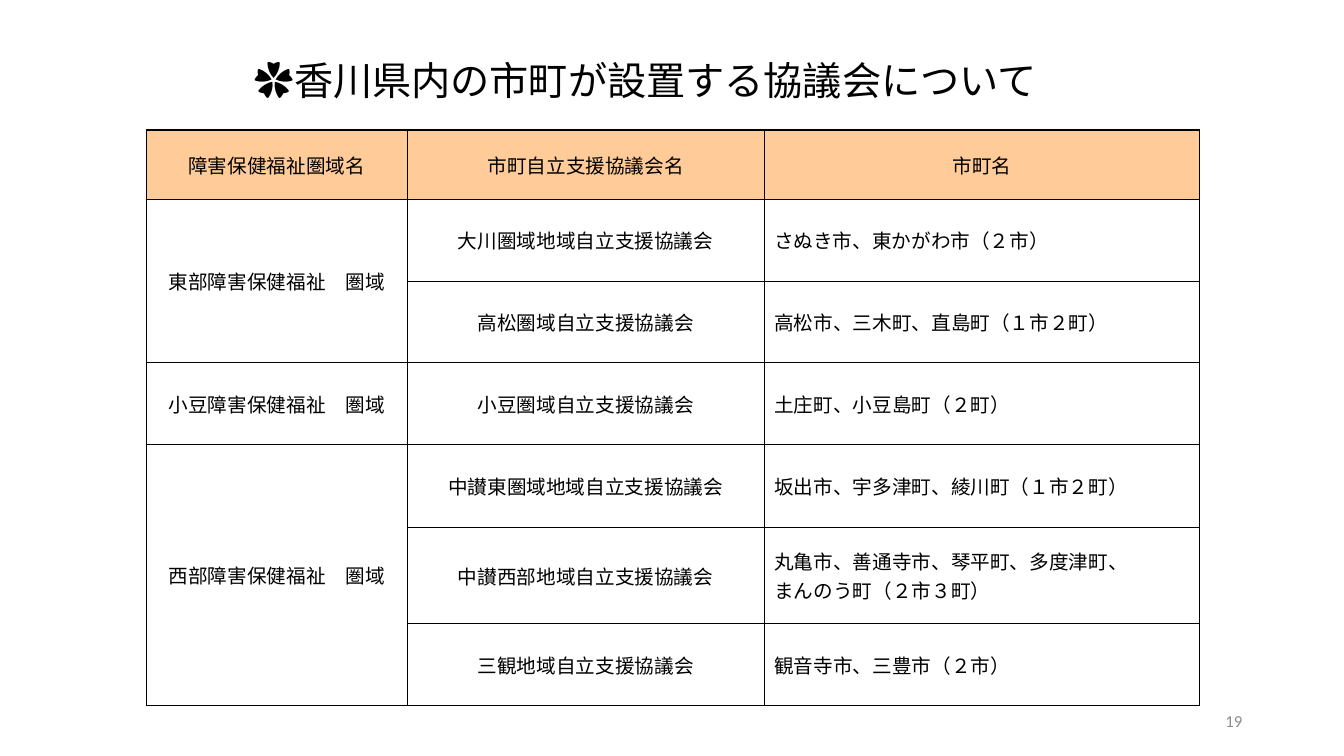
from lxml import etree
from pptx import Presentation
from pptx import util as u
from pptx.dml import color
from pptx.enum import text
from pptx.oxml import ns

GOTHIC = "Noto Sans CJK JP"
COLUMN_WIDTHS = [2.59, 3.54, 4.32]
ROW_HEIGHTS = [0.69, 0.81, 0.81, 0.81, 0.82, 0.96, 0.81]
HEADINGS = ["障害保健福祉圏域名", "市町自立支援協議会名", "市町名"]
REGIONS = [
    ("東部障害保健福祉　圏域", [
        ("大川圏域地域自立支援協議会", "さぬき市、東かがわ市（２市）"),
        ("高松圏域自立支援協議会", "高松市、三木町、直島町（１市２町）"),
    ]),
    ("小豆障害保健福祉　圏域", [
        ("小豆圏域自立支援協議会", "土庄町、小豆島町（２町）"),
    ]),
    ("西部障害保健福祉　圏域", [
        ("中讃東圏域地域自立支援協議会", "坂出市、宇多津町、綾川町（１市２町）"),
        ("中讃西部地域自立支援協議会",
         "丸亀市、善通寺市、琴平町、多度津町、\nまんのう町（２市３町）"),
        ("三観地域自立支援協議会", "観音寺市、三豊市（２市）"),
    ]),
]
ARIAL_CELLS = {(1, 0), (3, 1), (3, 2), (4, 0)}


def rgb(value):
    return color.RGBColor.from_string(value)


def format_run(run, size, font_name, hex_color):
    run.font.size = u.Pt(size)
    run.font.name = font_name
    run.font.color.rgb = rgb(hex_color)
    east_asian = etree.SubElement(run.font._element, ns.qn("a:ea"))
    east_asian.set("typeface", GOTHIC)


def add_text_box(slide, box, runs, size, hex_color, alignment):
    shape = slide.shapes.add_textbox(*map(u.Inches, box))
    frame = shape.text_frame
    frame.word_wrap = True
    frame.vertical_anchor = text.MSO_ANCHOR.MIDDLE
    paragraph = frame.paragraphs[0]
    paragraph.alignment = alignment
    for words, font_name in runs:
        run = paragraph.add_run()
        run.text = words
        format_run(run, size, font_name, hex_color)
    return paragraph


def add_title(slide, box):
    runs = [("✿", GOTHIC), ("香川県内の市町が設置する協議会について", "Calibri")]
    paragraph = add_text_box(slide, box, runs, 28, "000000", text.PP_ALIGN.LEFT)
    paragraph.line_spacing = 0.9


def add_page_number(slide, box):
    add_text_box(slide, box, [("19", "Calibri")], 12, "8C8C8C", text.PP_ALIGN.RIGHT)


def add_borders(cell):
    properties = cell._tc.get_or_add_tcPr()
    for side in ("lnL", "lnR", "lnT", "lnB"):
        line = etree.SubElement(properties, ns.qn(f"a:{side}"), w=str(u.Pt(1)))
        fill = etree.SubElement(line, ns.qn("a:solidFill"))
        etree.SubElement(fill, ns.qn("a:srgbClr"), val="000000")


def write_cell(cell, words, alignment, font_name):
    cell.text_frame.text = words
    for paragraph in cell.text_frame.paragraphs:
        paragraph.alignment = alignment
        properties = paragraph._p.get_or_add_pPr()
        properties.set("marL", str(u.Inches(0.38)))
        properties.set("indent", str(u.Inches(-0.38)))
        for run in paragraph.runs:
            format_run(run, 14, font_name, "000000")


def add_council_table(slide, box):
    frame = slide.shapes.add_table(
        len(ROW_HEIGHTS), len(COLUMN_WIDTHS), *map(u.Inches, box))
    table = frame.table
    for column, width in zip(table.columns, COLUMN_WIDTHS):
        column.width = u.Inches(width)
    for row, height in zip(table.rows, ROW_HEIGHTS):
        row.height = u.Inches(height)

    rows = [HEADINGS]
    for region, councils in REGIONS:
        first = len(rows)
        rows += [(region if index == 0 else "", *council)
                 for index, council in enumerate(councils)]
        if len(councils) > 1:
            table.cell(first, 0).merge(table.cell(len(rows) - 1, 0))

    for row_index, row in enumerate(rows):
        for column_index, words in enumerate(row):
            cell = table.cell(row_index, column_index)
            add_borders(cell)
            cell.fill.solid()
            cell.fill.fore_color.rgb = rgb("FFFFFF" if row_index else "FFCC99")
            cell.vertical_anchor = text.MSO_ANCHOR.MIDDLE
            is_town_list = row_index > 0 and column_index == 2
            alignment = text.PP_ALIGN.LEFT if is_town_list else text.PP_ALIGN.CENTER
            is_arial = (row_index, column_index) in ARIAL_CELLS
            write_cell(cell, words, alignment, "Arial" if is_arial else GOTHIC)


def main():
    presentation = Presentation()
    presentation.slide_width = u.Inches(13.33)
    presentation.slide_height = u.Inches(7.5)
    slide = presentation.slides.add_slide(presentation.slide_layouts[6])
    add_title(slide, (2.43, 0.2, 8.5, 1.25))
    add_council_table(slide, (1.45, 1.29, sum(COLUMN_WIDTHS), sum(ROW_HEIGHTS)))
    add_page_number(slide, (9.42, 6.95, 3, 0.4))
    presentation.save("out.pptx")


if __name__ == "__main__":
    main()
